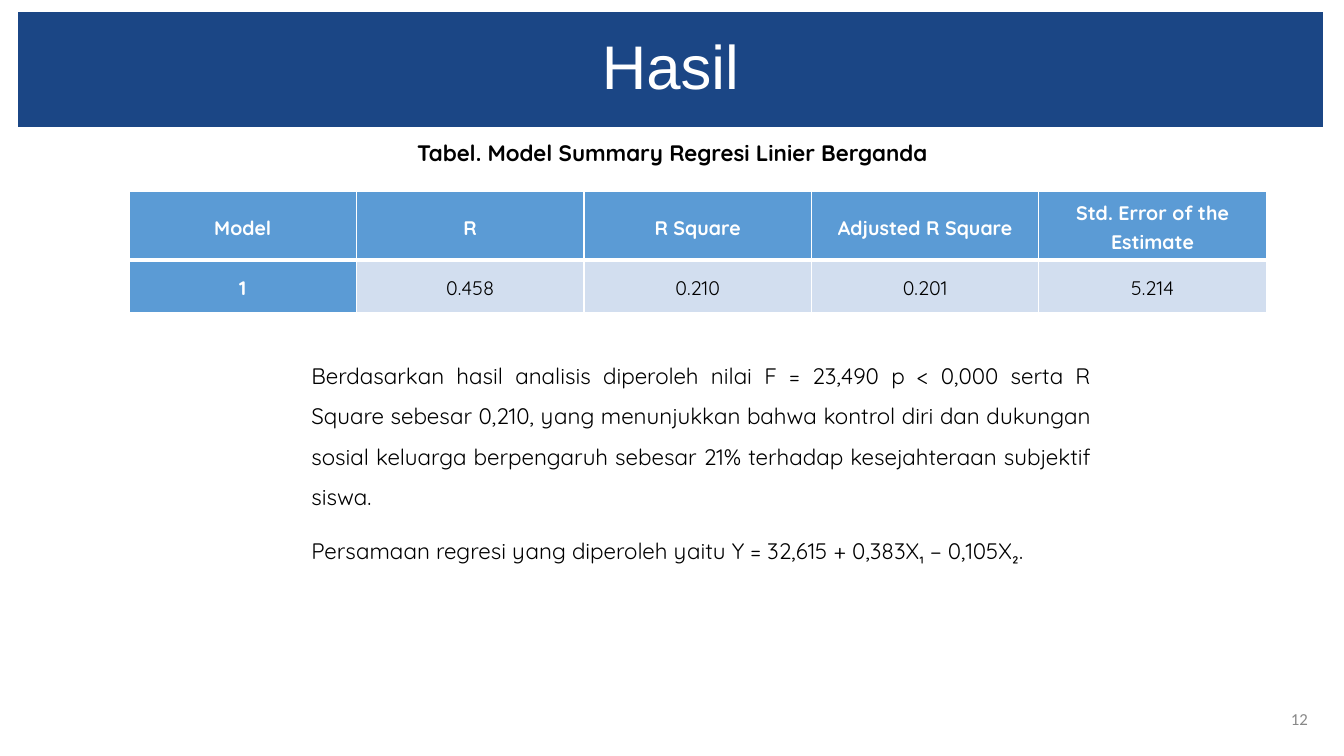
"""Build the regression results slide with its title, model summary table and findings."""
from lxml import etree
from pptx import Presentation
from pptx.dml.color import RGBColor
from pptx.enum.shapes import MSO_SHAPE
from pptx.enum.text import MSO_ANCHOR, PP_ALIGN
from pptx.oxml.ns import qn
from pptx.util import Inches, Pt

RECTANGLE = MSO_SHAPE.RECTANGLE
MIDDLE = MSO_ANCHOR.MIDDLE
CENTER, RIGHT, JUSTIFY = PP_ALIGN.CENTER, PP_ALIGN.RIGHT, PP_ALIGN.JUSTIFY
WHITE, BLACK, GRAY = "FFFFFF", "000000", "888888"
NAVY, BLUE, PALE_BLUE = "1B4685", "5B9BD5", "D2DEEF"


def color(value):
    return RGBColor.from_string(value)


def style(paragraph, font_name, size, font_color, alignment, spacing=1.0, bold=False):
    paragraph.alignment = alignment
    paragraph.line_spacing = spacing
    font = paragraph.font
    font.name, font.size, font.bold = font_name, Pt(size), bold
    font.color.rgb = color(font_color)


presentation = Presentation()
presentation.slide_width = Inches(13.33)
presentation.slide_height = Inches(7.5)
slide = presentation.slides.add_slide(presentation.slide_layouts[6])

number_box = slide.shapes.add_textbox(Inches(12.5), Inches(6.93), Inches(0.57), Inches(0.4))
number_box.text_frame.word_wrap = True
number_box.text_frame.vertical_anchor = MIDDLE
number_box.text_frame.text = "12"
style(number_box.text_frame.paragraphs[0], "Calibri", 12, GRAY, RIGHT)

title = slide.shapes.add_shape(RECTANGLE, Inches(0.18), Inches(0.12), Inches(12.94), Inches(1.14))
title.shadow.inherit = False
title.fill.solid()
title.fill.fore_color.rgb = color(NAVY)
title.line.fill.background()
title.text_frame.vertical_anchor = MIDDLE
title.text_frame.text = "Hasil"
style(title.text_frame.paragraphs[0], "Arial", 44, WHITE, CENTER, 0.9)

text_blocks = [
    ((2.93, 3.41, 7.99, 3.32), False, [
        "Berdasarkan hasil analisis diperoleh nilai F = 23,490 p < 0,000 serta R Square "
        "sebesar 0,210, yang menunjukkan bahwa kontrol diri dan dukungan sosial keluarga "
        "berpengaruh sebesar 21% terhadap kesejahteraan subjektif siswa.",
        "Persamaan regresi yang diperoleh yaitu Y = 32,615 + 0,383X₁ − 0,105X₂.",
    ]),
    ((3.98, 1.2, 5.35, 0.95), True, ["Tabel. Model Summary Regresi Linier Berganda"]),
]
for box, bold, texts in text_blocks:
    text_frame = slide.shapes.add_textbox(*map(Inches, box)).text_frame
    text_frame.word_wrap = True
    text_frame.text = "\n".join(texts)
    for index, paragraph in enumerate(text_frame.paragraphs):
        paragraph._p.get_or_add_pPr().set("marL", str(Inches(0.06)))
        style(paragraph, "Quicksand", 16, BLACK, JUSTIFY, 1.5, bold)
        if index:
            paragraph.space_before = Pt(10)

summary = [
    ["Model", "R", "R Square", "Adjusted R Square", "Std. Error of the Estimate"],
    ["1", "0.458", "0.210", "0.201", "5.214"],
]
table = slide.shapes.add_table(2, 5, Inches(1.28), Inches(1.9), Inches(11.28), Inches(1.2)).table
table.first_row = table.horz_banding = False
table.rows[0].height, table.rows[1].height = Inches(0.68), Inches(0.52)
for row, values in enumerate(summary):
    for column, value in enumerate(values):
        cell = table.cell(row, column)
        heading = row == 0 or column == 0
        cell.text = value
        cell.vertical_anchor = MIDDLE
        cell.margin_left = cell.margin_right = Inches(0.01)
        cell.margin_top = cell.margin_bottom = Inches(0.01)
        paragraph = cell.text_frame.paragraphs[0]
        style(paragraph, "Quicksand", 14, WHITE if heading else BLACK, CENTER, 1.15, heading)
        paragraph.space_after = Pt(8)
        properties = cell._tc.get_or_add_tcPr()
        for edge in ("lnL", "lnR", "lnT", "lnB"):
            width = 3 if row == 0 and edge == "lnB" else 1
            line = etree.SubElement(properties, qn(f"a:{edge}"), w=str(Pt(width)))
            line_fill = etree.SubElement(line, qn("a:solidFill"))
            etree.SubElement(line_fill, qn("a:srgbClr"), val=WHITE)
        cell.fill.solid()
        cell.fill.fore_color.rgb = color(BLUE if heading else PALE_BLUE)

presentation.save("out.pptx")
